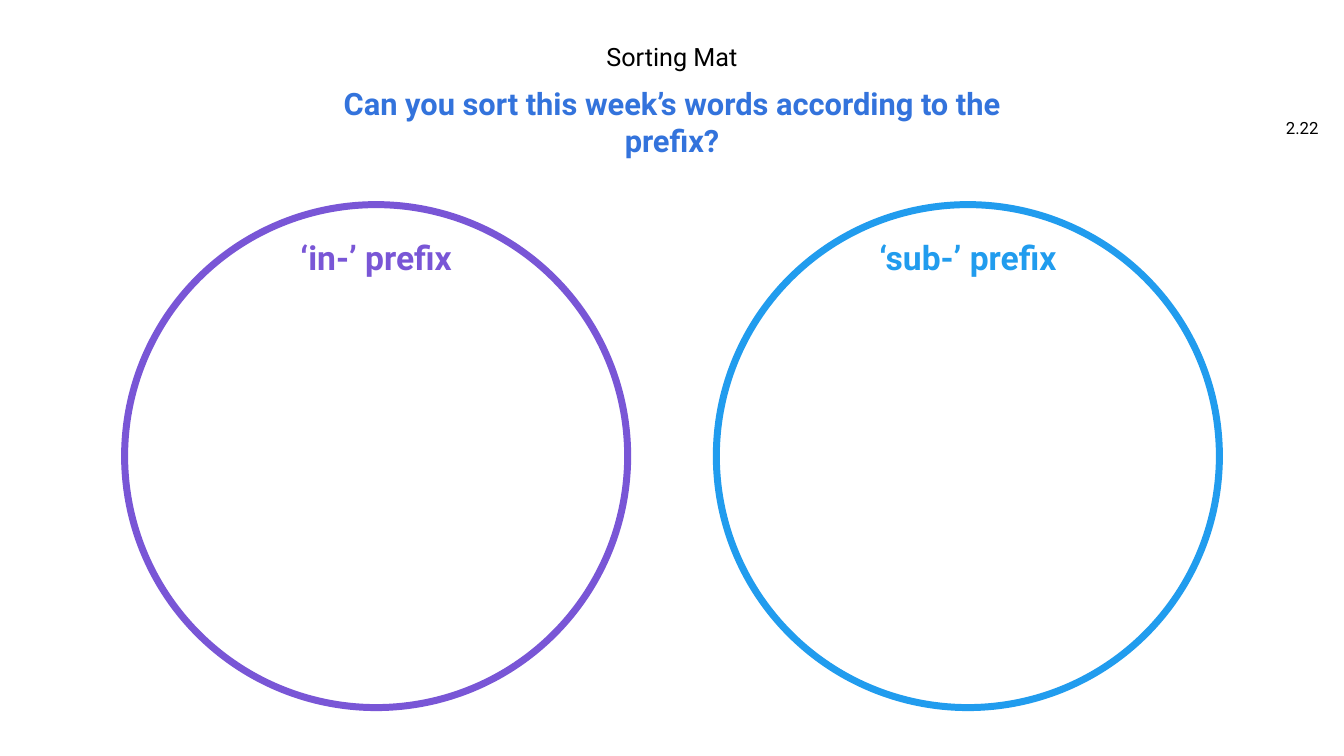
from dataclasses import dataclass
from pptx import Presentation as Deck
from pptx.dml.color import RGBColor as Rgb
from pptx.enum.shapes import MSO_SHAPE as Form
from pptx.enum.text import MSO_ANCHOR as Anchor, PP_ALIGN as Align
from pptx.util import Inches, Pt


@dataclass(frozen=True)
class Theme:
    font: str = "Roboto"
    ink: str = "000000"
    blue: str = "3373DC"
    violet: str = "7956D6"
    sky: str = "219CEE"
    note: int = 12
    title: int = 18
    ask: int = 22
    label: int = 24
    ring: int = 5


look = Theme()
deck = Deck()
deck.slide_width, deck.slide_height = Inches(13.33), Inches(7.5)
col, row = deck.slide_width / 100, deck.slide_height / 100


def grid(x, y, w, h):
    return tuple(round(n) for n in (x * col, y * row, w * col, h * row))


def write(slide, box, text, size, color, bold=False,
          align=Align.CENTER, anchor=Anchor.TOP, space=1.0):
    frame = slide.shapes.add_textbox(*box).text_frame
    para = frame.paragraphs[0]
    para.text = text
    font = para.runs[0].font
    formats = {
        frame: {"word_wrap": True, "vertical_anchor": anchor},
        para: {"alignment": align, "line_spacing": space},
        font: {"name": look.font, "size": Pt(size), "bold": bold},
    }
    for part, values in formats.items():
        for key, value in values.items():
            setattr(part, key, value)
    font.color.rgb = Rgb.from_string(color)


def header(slide, box):
    x, y, w, h = box
    mid = x + w / 2
    write(slide, grid(mid - 32.65, y, 65.3, h * 0.3), "Sorting Mat",
          look.title, look.ink, space=0.9)
    write(slide, grid(mid - 28.65, y + h * 0.33, 57.3, h * 0.67),
          "Can you sort this week’s words according to the prefix?",
          look.ask, look.blue, bold=True)
    write(slide, grid(94.15, y + h * 0.56, 4.7, h * 0.33), "2.22",
          look.note, look.ink, align=Align.RIGHT, anchor=Anchor.MIDDLE)


def circle(slide, box, text, color, share):
    x, y, w, h = box
    ring = slide.shapes.add_shape(Form.OVAL, *grid(*box))
    ring.shadow.inherit = False
    ring.fill.background()
    ring.line.color.rgb = Rgb.from_string(color)
    ring.line.width = Pt(look.ring)
    left = x + w * (1 - share) / 2
    write(slide, grid(left, y + h * 0.054, w * share, h * 0.1),
          text, look.label, color, bold=True)


def circles(slide, box, gap):
    x, y, w, h = box
    sets = (("‘in-’ prefix", look.violet, 0.42),
            ("‘sub-’ prefix", look.sky, 0.53))
    wide = (w - gap) / len(sets)
    for i, (text, color, share) in enumerate(sets):
        circle(slide, (x + i * (wide + gap), y, wide, h), text, color, share)


def main():
    slide = deck.slides.add_slide(deck.slide_layouts[6])
    header(slide, (0, 5.33, 100, 16))
    circles(slide, (9.27, 27.07, 81.46, 66.53), 6.6)
    deck.save("out.pptx")


if __name__ == "__main__":
    main()
